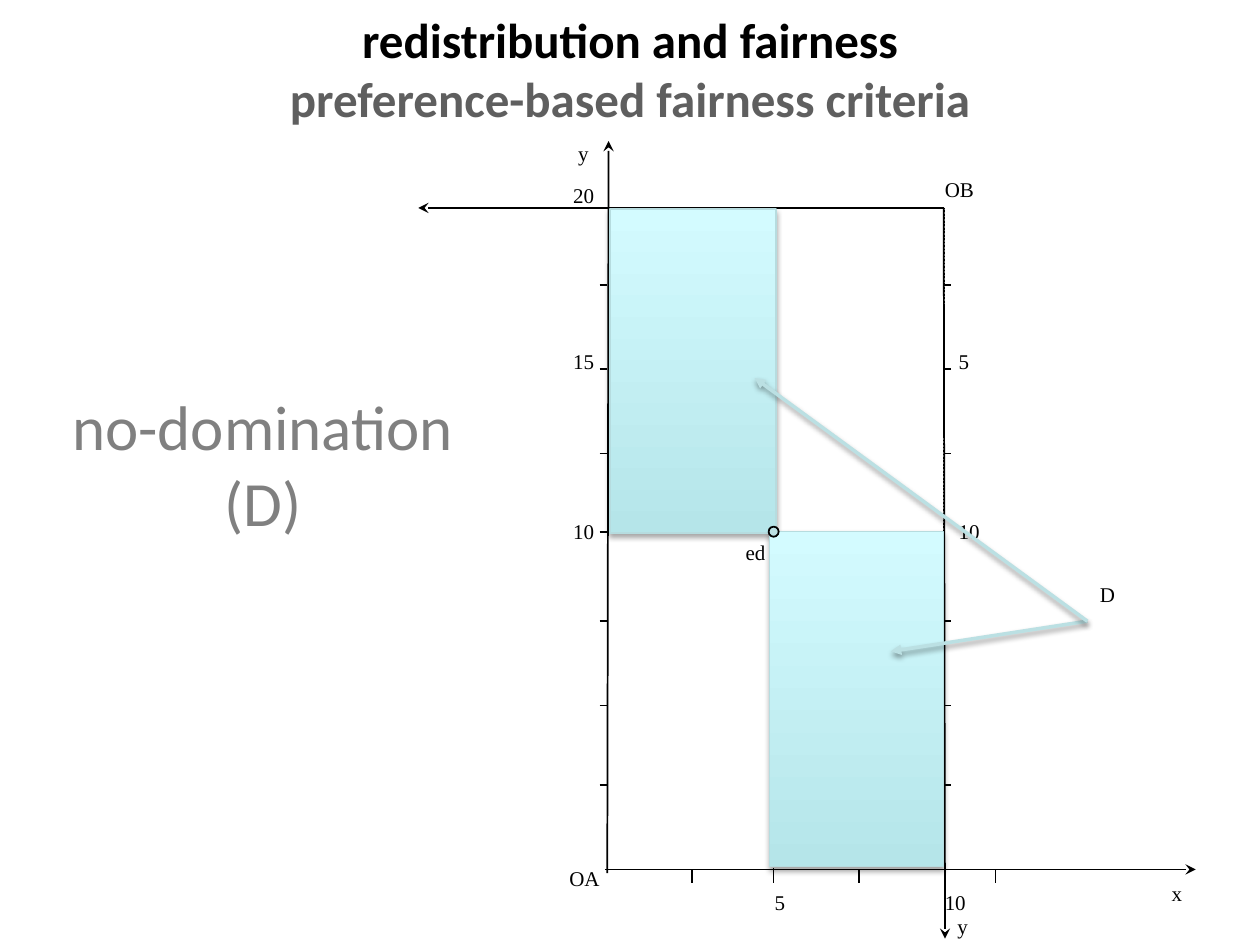
from lxml import etree
from pptx import Presentation
from pptx import util as u
from pptx.dml.color import RGBColor
from pptx.enum import dml, shapes, text
from pptx.oxml.ns import qn

WIDTH, HEIGHT = 10, 7.5
BLACK, PALE, EDGE = "000000", "BBE0E3", "B6DCDF"
SERIF, SANS = "Times New Roman", "Calibri"

# The box diagram: origin of A at bottom left, origin of B at top right
LEFT, MIDDLE, RIGHT = 4.82, 6.14, 7.49
TOP, CENTRE, BOTTOM = 1.65, 4.22, 6.9
Y_TICKS = (2.26, 2.93, 3.6, CENTRE, 4.93, 5.6, 6.23)
X_TICKS = (5.49, MIDDLE, 6.82, 7.9)
TICK_Y, TICK_X = 0.06, 0.11

# label, left, top, width
LABELS = [
    ("20", 4.45, 1.4, 0.37),
    ("15", 4.45, 2.72, 0.37),
    ("10", 4.45, 4.07, 0.37),
    ("5", 7.51, 2.72, 0.28),
    ("10", 7.51, 4.07, 0.37),
    ("5", 6.05, 7.01, 0.28),
    ("10", 7.4, 7.01, 0.37),
    ("y", 4.49, 1.07, 0.28),
    ("x", 9.2, 6.94, 0.28),
    ("y", 7.5, 7.2, 0.28),
    ("OB", 7.4, 1.35, 0.43),
    ("OA", 4.42, 6.82, 0.44),
    ("ed", 5.82, 4.23, 0.36),
    ("D", 8.63, 4.57, 0.38),
]


def rgb(value):
    return RGBColor.from_string(value)


def style(font, name, size, color, bold=False):
    font.name, font.size, font.bold = name, u.Pt(size), bold
    font.color.rgb = rgb(color)


def drop_shadow(spPr, opacity):
    """Replace the theme's effects by a soft shadow below; none if opacity is 0."""
    for old in spPr.findall(qn("a:effectLst")):
        spPr.remove(old)
    effects = etree.SubElement(spPr, qn("a:effectLst"))
    if opacity:
        shadow = etree.SubElement(effects, qn("a:outerShdw"), blurRad="40000",
                                  dist="23000", dir="5400000", rotWithShape="0")
        color = etree.SubElement(shadow, qn("a:srgbClr"), val=BLACK)
        etree.SubElement(color, qn("a:alpha"), val=str(opacity * 1000))


def add_line(slide, start, end, color=BLACK, width=1, head=None, dotted=False, shadow=0):
    line = slide.shapes.add_connector(
        shapes.MSO_CONNECTOR.STRAIGHT, *map(u.Inches, (*start, *end)))
    line.line.color.rgb = rgb(color)
    line.line.width = u.Pt(width)
    if dotted:
        line.line.dash_style = dml.MSO_LINE.ROUND_DOT
    spPr = line._element.spPr
    if head:
        etree.SubElement(spPr.find(qn("a:ln")), qn("a:tailEnd"), type=head)
    drop_shadow(spPr, shadow)


def add_label(slide, label, left, top, width):
    box = slide.shapes.add_textbox(*map(u.Inches, (left, top, width, 0.3)))
    box.text_frame.word_wrap = False
    paragraph = box.text_frame.paragraphs[0]
    paragraph.text = label
    style(paragraph.font, SERIF, 12, BLACK)


def add_dominated_area(slide, left, top, right, bottom):
    area = slide.shapes.add_shape(
        shapes.MSO_SHAPE.RECTANGLE,
        *map(u.Inches, (left, top, right - left, bottom - top)))
    area.fill.gradient()
    area.fill.gradient_angle = 90
    for stop, color in zip(area.fill.gradient_stops, ("B5E5E9", "D3FBFF")):
        stop.color.rgb = rgb(color)
    area.line.color.rgb = rgb(EDGE)
    area.line.width = u.Pt(0.75)
    drop_shadow(area._element.spPr, 35)


def add_equal_division(slide, x, y, size=0.08):
    point = slide.shapes.add_shape(
        shapes.MSO_SHAPE.FLOWCHART_CONNECTOR,
        *map(u.Inches, (x - size / 2, y - size / 2, size, size)))
    point.shadow.inherit = False
    point.fill.solid()
    point.fill.fore_color.rgb = rgb(PALE)
    point.line.color.rgb = rgb(BLACK)
    point.line.width = u.Pt(1)


def add_axes(slide):
    add_line(slide, (4.8, BOTTOM), (9.49, BOTTOM), head="stealth")
    add_line(slide, (LEFT, 6.93), (4.83, 1.12), head="stealth")
    add_line(slide, (RIGHT, TOP), (7.5, 7.45), head="stealth")
    add_line(slide, (RIGHT, TOP), (3.32, TOP), head="stealth")
    for y in Y_TICKS:
        add_line(slide, (LEFT - TICK_Y, y), (LEFT, y))
        if y != CENTRE:
            add_line(slide, (RIGHT, y), (RIGHT + TICK_Y, y))
    for x in X_TICKS:
        add_line(slide, (x, BOTTOM), (x, BOTTOM + TICK_X))
    add_line(slide, (RIGHT, CENTRE), (RIGHT, TOP), dotted=True)
    add_line(slide, (MIDDLE, BOTTOM), (MIDDLE, TOP), dotted=True)
    add_line(slide, (LEFT, CENTRE), (RIGHT, CENTRE), dotted=True)


def set_title(slide):
    title = slide.shapes.title
    title.left, title.top, title.width, title.height = map(
        u.Inches, (0.35, 2.1, 3.47, 3.15))
    frame = title.text_frame
    frame.auto_size = text.MSO_AUTO_SIZE.NONE
    frame.vertical_anchor = text.MSO_ANCHOR.MIDDLE
    frame.text = "no-domination\v(D)"
    frame.paragraphs[0].alignment = text.PP_ALIGN.CENTER
    style(frame.paragraphs[0].font, SANS, 36, "808080")


def add_heading(slide):
    box = slide.shapes.add_textbox(*map(u.Inches, (0.5, -0.08, 9, 1.25)))
    frame = box.text_frame
    frame.word_wrap = True
    frame.vertical_anchor = text.MSO_ANCHOR.MIDDLE
    paragraph = frame.paragraphs[0]
    paragraph.alignment = text.PP_ALIGN.CENTER
    topic = paragraph.add_run()
    topic.text = "redistribution and fairness"
    style(topic.font, SANS, 28, BLACK, bold=True)
    paragraph.add_line_break()
    subtopic = paragraph.add_run()
    subtopic.text = "preference-based fairness criteria"
    style(subtopic.font, SANS, 28, "5F5F5F", bold=True)


def main():
    deck = Presentation()
    deck.slide_width, deck.slide_height = u.Inches(WIDTH), u.Inches(HEIGHT)
    slide = deck.slides.add_slide(deck.slide_layouts[5])
    set_title(slide)
    add_heading(slide)
    add_axes(slide)
    for label in LABELS:
        add_label(slide, *label)
    add_dominated_area(slide, 4.84, 1.66, 6.16, 4.23)
    add_dominated_area(slide, 6.11, CENTRE, RIGHT, 6.88)
    add_equal_division(slide, MIDDLE, CENTRE)
    for target in ((7.07, 5.17), (5.99, 3)):
        add_line(slide, (8.63, 4.93), target, PALE, 2, head="triangle", shadow=38)
    deck.save("out.pptx")


if __name__ == "__main__":
    main()
